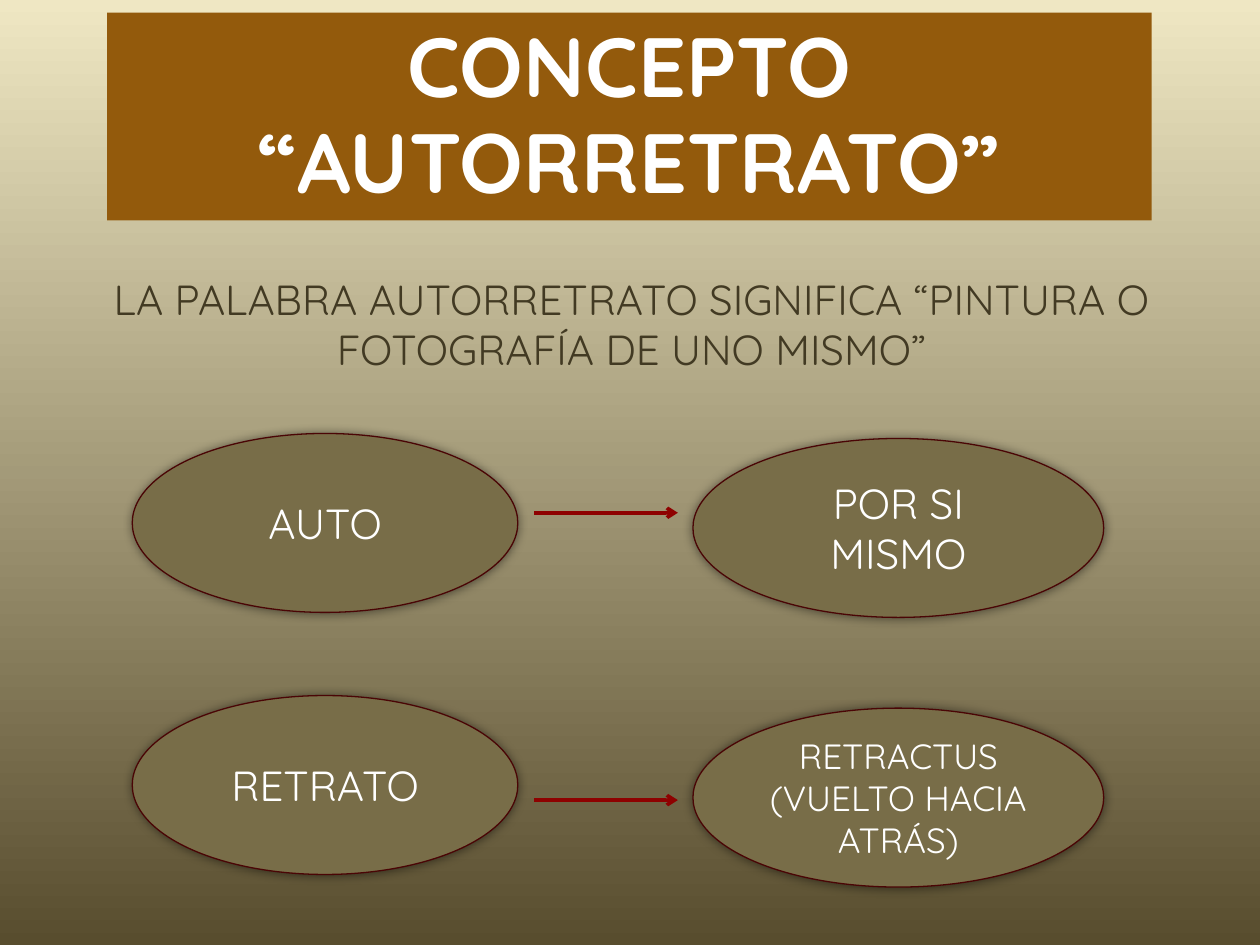
from lxml import etree
from pptx import Presentation
from pptx import util as u
from pptx.dml.color import RGBColor
from pptx.enum import shapes, text
from pptx.oxml import parse_xml
from pptx.oxml.ns import nsdecls, qn

# Content
TITLE = "CONCEPTO “AUTORRETRATO”"
MEANING = "LA PALABRA AUTORRETRATO SIGNIFICA “PINTURA O FOTOGRAFÍA DE UNO MISMO”"
# term, its top, explanation, its top, explanation size, arrow height
ROWS = [
    ("AUTO", 3.44, "POR SI MISMO", 3.48, "body", 4.07),
    ("RETRATO", 5.52, "RETRACTUS (VUELTO HACIA ATRÁS)", 5.62, "small", 6.35),
]

# Layout in inches
TERM_X, TERM_W = 1.05, 3.06
MEANING_X, MEANING_W = 5.5, 3.26
OVAL_H = 1.42
ARROW_X = (4.24, 5.38)

THEME = {
    "font": "Quicksand",
    "sizes": {"title": 48, "body": 24, "small": 20},
    "top": "EFE7C3", "bottom": "584D2E",
    "banner": "935A0C", "oval": "786D48", "outline": "4A0505",
    "arrow": "8E0100", "light": "FFFFFF", "dark": "423A23",
}


def color(name):
    return RGBColor.from_string(THEME[name])


def write(sp, words, size, ink, anchor=text.MSO_ANCHOR.MIDDLE, bold=False, spacing=1.0):
    tf = sp.text_frame
    frame = {"word_wrap": True, "auto_size": text.MSO_AUTO_SIZE.NONE, "vertical_anchor": anchor}
    for name, value in frame.items():
        setattr(tf, name, value)
    p = tf.paragraphs[0]
    p.alignment = text.PP_ALIGN.CENTER
    p.line_spacing = spacing
    r = p.add_run()
    r.text = words
    font = {"name": THEME["font"], "size": u.Pt(THEME["sizes"][size]), "bold": bold}
    for name, value in font.items():
        setattr(r.font, name, value)
    r.font.color.rgb = color(ink)


def add_oval(s, x, y, w, words, size):
    sp = s.shapes.add_shape(shapes.MSO_SHAPE.OVAL, *map(u.Inches, (x, y, w, OVAL_H)))
    sp.fill.solid()
    sp.fill.fore_color.rgb = color("oval")
    sp.line.color.rgb = color("outline")
    sp.line.width = u.Pt(0.75)
    # Soft glow-like shadow, centred under the oval
    sp._element.spPr.append(parse_xml(
        f'<a:effectLst {nsdecls("a")}><a:outerShdw blurRad="{u.Pt(6)}" dist="0" dir="0">'
        '<a:srgbClr val="000000"><a:alpha val="50000"/></a:srgbClr>'
        '</a:outerShdw></a:effectLst>'))
    write(sp, words, size, "light")


def add_arrow(s, y):
    start, end = ARROW_X
    line = s.shapes.add_connector(shapes.MSO_CONNECTOR.STRAIGHT,
                                  *map(u.Inches, (start, y, end, y)))
    line.line.color.rgb = color("arrow")
    line.line.width = u.Pt(2)
    etree.SubElement(line.line._get_or_add_ln(), qn("a:tailEnd"), type="arrow")
    etree.SubElement(line._element.spPr, qn("a:effectLst"))


def main():
    prs = Presentation()
    prs.slide_width, prs.slide_height = u.Inches(10), u.Inches(7.5)
    s = prs.slides.add_slide(prs.slide_layouts[5])

    # Background, light at the top
    fill = s.background.fill
    fill.gradient()
    fill.gradient_angle = 270
    for stop, name, position in zip(fill.gradient_stops, ("top", "bottom"), (0, 1)):
        stop.color.rgb = color(name)
        stop.position = position

    # Title banner
    title = s.shapes.title
    title.left, title.top, title.width, title.height = map(u.Inches, (0.85, 0.1, 8.29, 1.65))
    title.fill.solid()
    title.fill.fore_color.rgb = color("banner")
    write(title, TITLE, "title", "light", bold=True, spacing=0.95)

    # Meaning of the word
    box = s.shapes.add_textbox(*map(u.Inches, (0.39, 2.12, 9.24, 1.07)))
    write(box, MEANING, "body", "dark", anchor=text.MSO_ANCHOR.TOP)

    # Each term with its explanation
    for term, term_y, meaning, meaning_y, size, arrow_y in ROWS:
        add_oval(s, TERM_X, term_y, TERM_W, term, "body")
        add_oval(s, MEANING_X, meaning_y, MEANING_W, meaning, size)
        add_arrow(s, arrow_y)

    prs.save("out.pptx")


if __name__ == "__main__":
    main()
